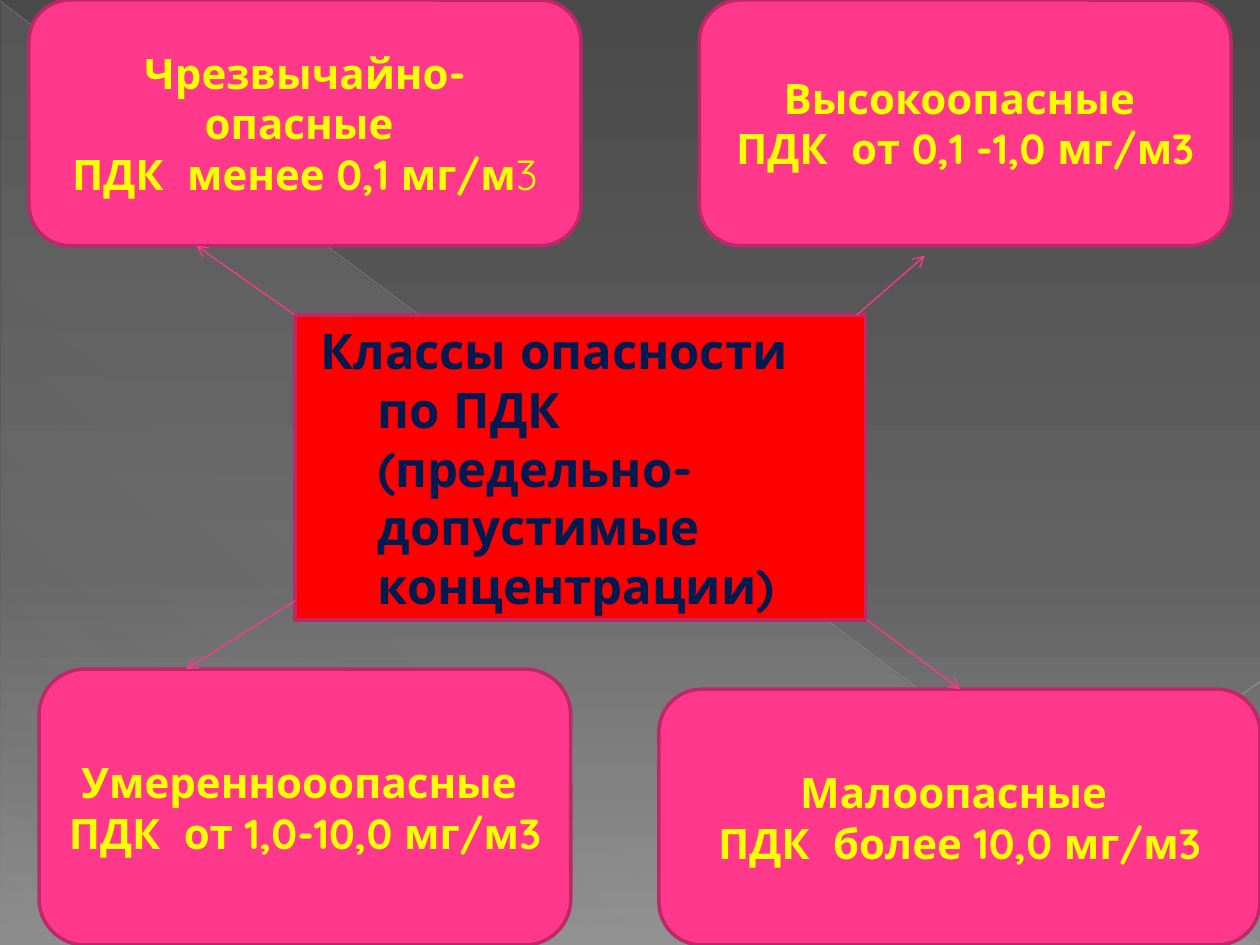
from pptx import Presentation
from pptx.dml.color import RGBColor
from pptx.enum import shapes, text
from pptx.oxml import ns, xmlchemy
from pptx.util import Inches, Pt

COLORS = {
    "pink": "FF388C", "border": "BD2968", "red": "FF0000", "yellow": "FFFF00",
    "navy": "001A4F", "veil": "D2D2D2", "ray": "BFBFBF", "short_ray": "C6C6C6",
}
BACKDROP = [(0, "4A4A4A", 100), (60, "626262", 100), (100, "8C8C8C", 100)]
VEIL = [(0, COLORS["veil"], 10), (70, COLORS["veil"], 8), (100, COLORS["veil"], 1)]
SHAPE = shapes.MSO_SHAPE

# box, preset, paragraphs made of (words, bold) runs
CLASSES = [
    ((0.23, 0, 4.38, 1.95), SHAPE.FLOWCHART_ALTERNATE_PROCESS,
     [[("Чрезвычайно-опасные ", True)], [("ПДК  менее 0,1 мг/м", True), ("3", False)]]),
    ((5.55, 0, 4.22, 1.95), SHAPE.ROUNDED_RECTANGLE,
     [[("Высокоопасные ", True)], [("ПДК  от 0,1 -1,0 мг/м3", True)]]),
    ((0.31, 5.31, 4.22, 2.19), SHAPE.ROUNDED_RECTANGLE,
     [[("Умереннооопасные ", True)], [("ПДК  от 1,0-10,0 мг/м3", True)]]),
    ((5.23, 5.47, 4.77, 2.03), SHAPE.ROUNDED_RECTANGLE,
     [[("Малоопасные ", True)], [("ПДК  более 10,0 мг/м3", True)]]),
]
ARROWS = [
    ((2.34, 2.5), (1.56, 1.95)), ((6.8, 2.5), (7.34, 2.03)),
    ((2.34, 4.77), (1.48, 5.31)), ((6.88, 4.92), (7.62, 5.47)),
]


def child(parent, tag, **attributes):
    element = xmlchemy.OxmlElement(tag)
    for key, value in attributes.items():
        element.set(key, str(value))
    parent.append(element)
    return element


def set_gradient(fill, owner, stops, angle):
    """Give the owner of a fill a gradient of (position, colour, opacity) stops."""
    fill.solid()
    solid = next(owner.iter(ns.qn("a:solidFill")))
    gradient = xmlchemy.OxmlElement("a:gradFill")
    stop_list = child(gradient, "a:gsLst")
    for position, color, opacity in stops:
        stop = child(stop_list, "a:gs", pos=position * 1000)
        child(child(stop, "a:srgbClr", val=color), "a:alpha", val=opacity * 1000)
    child(gradient, "a:lin", ang=angle * 60000, scaled=0)
    solid.getparent().replace(solid, gradient)


def add_line(slide, start, end, color, width, opacity=100, arrow=False):
    line = slide.shapes.add_connector(
        shapes.MSO_CONNECTOR.STRAIGHT, *map(Inches, start + end))
    line.line.color.rgb = RGBColor.from_string(color)
    line.line.width = Pt(width)
    if opacity < 100:
        tint = next(line.line._ln.iter(ns.qn("a:srgbClr")))
        child(tint, "a:alpha", val=opacity * 1000)
    if arrow:
        child(line.line._ln, "a:tailEnd", type="arrow")
    child(line._element.spPr, "a:effectLst")


def add_box(slide, box, preset, fill):
    panel = slide.shapes.add_shape(preset, *map(Inches, box))
    panel.shadow.inherit = False
    panel.fill.solid()
    panel.fill.fore_color.rgb = RGBColor.from_string(fill)
    panel.line.color.rgb = RGBColor.from_string(COLORS["border"])
    panel.line.width = Pt(2)
    return panel


def write(panel, paragraphs, size, color, align, hanging=0):
    frame = panel.text_frame
    frame.word_wrap = True
    frame.vertical_anchor = text.MSO_ANCHOR.MIDDLE
    for index, runs in enumerate(paragraphs):
        paragraph = frame.add_paragraph() if index else frame.paragraphs[0]
        paragraph.alignment = align
        if hanging:
            properties = paragraph._p.get_or_add_pPr()
            properties.set("marL", str(Inches(hanging)))
            properties.set("indent", str(-Inches(hanging)))
        for words, bold in runs:
            run = paragraph.add_run()
            run.text = words
            run.font.name = "Quicksand"
            run.font.size = Pt(size)
            run.font.bold = bold
            run.font.color.rgb = RGBColor.from_string(color)


def add_backdrop(slide):
    set_gradient(slide.background.fill, slide._element, BACKDROP, 90)
    veil = slide.shapes.add_shape(
        SHAPE.RIGHT_TRIANGLE, *map(Inches, (0.01, 0.02, 9.98, 7.48)))
    veil.shadow.inherit = False
    veil.line.fill.background()
    set_gradient(veil.fill, veil._element, VEIL, 133)
    add_line(slide, (0, 0.01), (9.99, 7.49), COLORS["ray"], 0.39, opacity=35)
    add_line(slide, (10, 5.41), (7.07, 7.49), COLORS["short_ray"], 0.47, opacity=45)


def add_topic(slide, box):
    topic = add_box(slide, box, SHAPE.FLOWCHART_PROCESS, COLORS["red"])
    words = "Классы опасности по ПДК (предельно-допустимые концентрации)"
    write(topic, [[(" ", False), (words, True)]], 28, COLORS["navy"],
          text.PP_ALIGN.LEFT, hanging=0.56)


def add_hazard_class(slide, box, preset, paragraphs):
    panel = add_box(slide, box, preset, COLORS["pink"])
    write(panel, paragraphs, 24, COLORS["yellow"], text.PP_ALIGN.CENTER)


def main():
    deck = Presentation()
    deck.slide_width, deck.slide_height = Inches(10), Inches(7.5)
    slide = deck.slides.add_slide(deck.slide_layouts[6])
    add_backdrop(slide)
    add_topic(slide, (2.34, 2.5, 4.53, 2.42))
    for hazard_class in CLASSES:
        add_hazard_class(slide, *hazard_class)
    for start, end in ARROWS:
        add_line(slide, start, end, COLORS["pink"], 0.75, arrow=True)
    deck.save("out.pptx")


if __name__ == "__main__":
    main()
